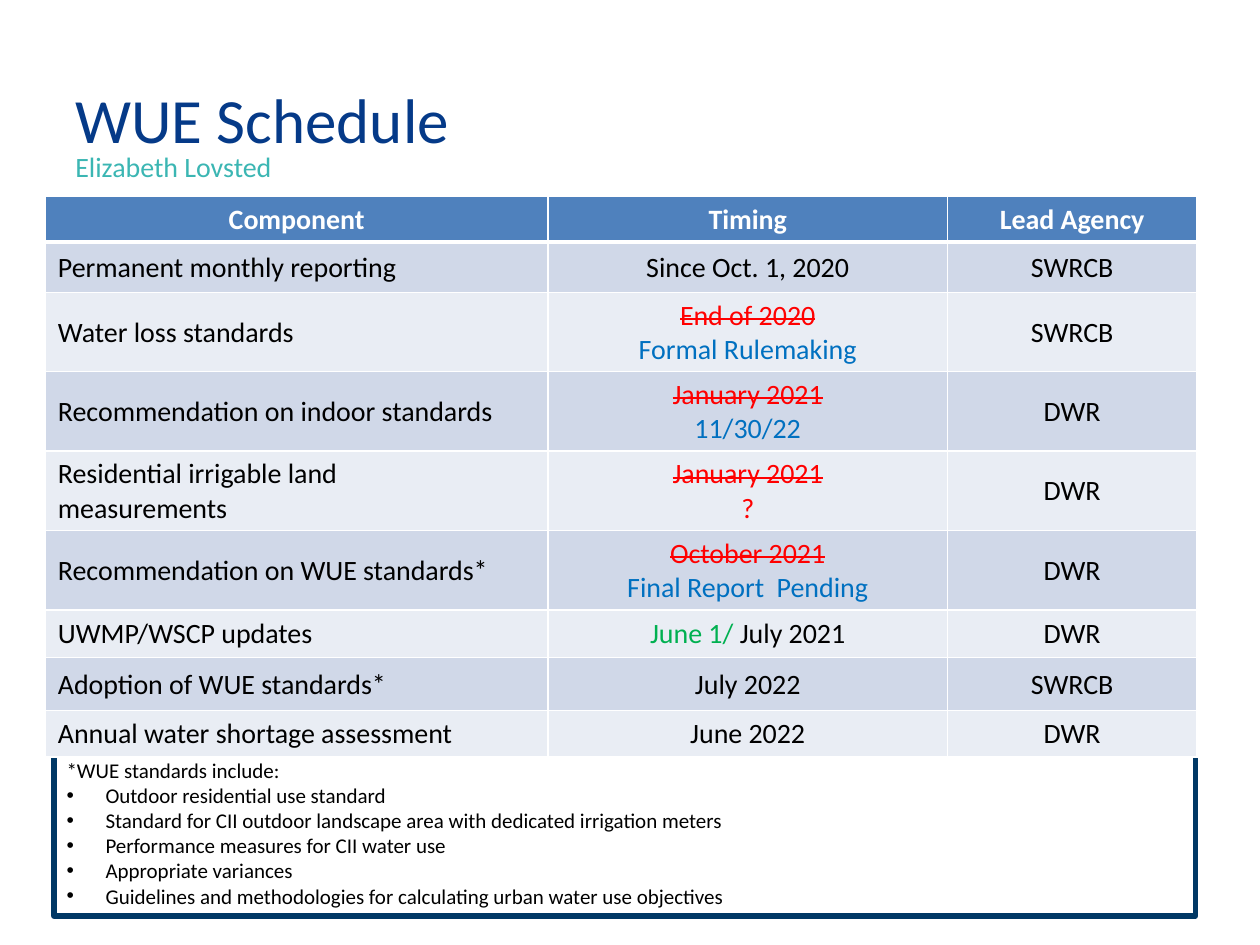
from lxml import etree
from pptx import Presentation
from pptx.dml.color import RGBColor
from pptx.enum.shapes import MSO_SHAPE
from pptx.enum.text import MSO_ANCHOR, PP_ALIGN
from pptx.oxml.ns import qn
from pptx.util import Inches, Pt

LEFT, CENTER = PP_ALIGN.LEFT, PP_ALIGN.CENTER
TOP, MIDDLE, BOTTOM = MSO_ANCHOR.TOP, MSO_ANCHOR.MIDDLE, MSO_ANCHOR.BOTTOM
RECTANGLE = MSO_SHAPE.RECTANGLE
TITLE_ONLY = 5
FONT = "Calibri"
COLORS = {
    "white": "FFFFFF", "black": "000000", "navy": "053A88", "teal": "3BB6B3",
    "frame": "003865", "header": "4F81BD", "band": "D0D8E8", "light": "E9EDF4",
    "red": "FF0000", "blue": "0070C0", "green": "00B050",
}


def color(name):
    return RGBColor.from_string(COLORS[name])


def struck(text):
    return [(text, "red", True)]


class SlideBuilder:
    def __init__(self, deck):
        self.page = deck.slides.add_slide(deck.slide_layouts[TITLE_ONLY])

    def span(self, para, text, size, shade="black", strike=False, bold=False):
        span = para.add_run()
        span.text = text
        font = span.font
        font.name, font.size, font.bold = FONT, Pt(size), bold
        font.color.rgb = color(shade)
        if strike:
            font._element.set("strike", "sngStrike")

    def title(self, text, left, top, width, height):
        box = self.page.shapes.title
        box.left, box.top = Inches(left), Inches(top)
        box.width, box.height = Inches(width), Inches(height)
        box.text_frame.vertical_anchor = BOTTOM
        para = box.text_frame.paragraphs[0]
        para.alignment = LEFT
        para.line_spacing = Pt(36)
        self.span(para, text, 36, "navy")

    def subtitle(self, text, left, top, width, height):
        box = self.page.shapes.add_textbox(
            Inches(left), Inches(top), Inches(width), Inches(height))
        box.text_frame.word_wrap = True
        self.span(box.text_frame.paragraphs[0], text, 16, "teal")

    def bullet(self, para):
        properties = para._p.get_or_add_pPr()
        properties.set("marL", str(Inches(0.31)))
        properties.set("indent", str(-Inches(0.31)))
        etree.SubElement(properties, qn("a:buFont")).set("typeface", "Arial")
        etree.SubElement(properties, qn("a:buChar")).set("char", "•")

    def note(self, heading, items, left, top, width, height):
        box = self.page.shapes.add_shape(
            RECTANGLE, Inches(left), Inches(top), Inches(width), Inches(height))
        box.shadow.inherit = False
        box.fill.solid()
        box.fill.fore_color.rgb = color("white")
        box.line.color.rgb = color("frame")
        box.line.width = Pt(3)
        frame = box.text_frame
        frame.word_wrap = True
        frame.vertical_anchor = TOP
        para = frame.paragraphs[0]
        para.alignment = LEFT
        self.span(para, heading, 12)
        for item in items:
            para = frame.add_paragraph()
            para.alignment = LEFT
            self.bullet(para)
            self.span(para, item, 12)

    def borders(self, cell, bottom):
        properties = cell._tc.get_or_add_tcPr()
        for side, width in (("lnL", 1), ("lnR", 1), ("lnT", 1), ("lnB", bottom)):
            line = etree.SubElement(properties, qn(f"a:{side}"), w=str(Pt(width)))
            fill = etree.SubElement(line, qn("a:solidFill"))
            etree.SubElement(fill, qn("a:srgbClr"), val=COLORS["white"])

    def cell(self, cell, content, fill, align, header):
        self.borders(cell, 3 if header else 1)
        cell.fill.solid()
        cell.fill.fore_color.rgb = color(fill)
        cell.vertical_anchor = TOP if header else MIDDLE
        cell.margin_top = Inches(0.05 if header else 0.04)
        cell.margin_bottom = Inches(0.03)
        lines = [[(content,)]] if isinstance(content, str) else content
        for index, spans in enumerate(lines):
            frame = cell.text_frame
            para = frame.add_paragraph() if index else frame.paragraphs[0]
            para.alignment = align
            for text, *style in spans:
                if header:
                    self.span(para, text, 16, "white", bold=True)
                else:
                    self.span(para, text, 16, *style)

    def table(self, rows, left, top, widths, heights):
        table = self.page.shapes.add_table(
            len(rows), len(widths), Inches(left), Inches(top),
            Inches(sum(widths)), Inches(sum(heights))).table
        for column, width in zip(table.columns, widths):
            column.width = Inches(width)
        for r, (values, height) in enumerate(zip(rows, heights)):
            table.rows[r].height = Inches(height)
            header = r == 0
            fill = "header" if header else ("light", "band")[r % 2]
            for c, content in enumerate(values):
                align = CENTER if header or c else LEFT
                self.cell(table.cell(r, c), content, fill, align, header)


SCHEDULE = [
    ("Component", "Timing", "Lead Agency"),
    ("Permanent monthly reporting", "Since Oct. 1, 2020", "SWRCB"),
    ("Water loss standards",
     [struck("End of 2020"), [("Formal Rulemaking", "blue")]], "SWRCB"),
    ("Recommendation on indoor standards",
     [struck("January 2021"), [("11/30/22", "blue")]], "DWR"),
    ([[("Residential irrigable land",)], [("measurements",)]],
     [struck("January 2021"), [("?", "red")]], "DWR"),
    ("Recommendation on WUE standards*",
     [struck("October 2021"), [("Final Report  Pending", "blue")]], "DWR"),
    ("UWMP/WSCP updates", [[("June 1/ ", "green"), ("July 2021",)]], "DWR"),
    ("Adoption of WUE standards*", "July 2022", "SWRCB"),
    ("Annual water shortage assessment", "June 2022", "DWR"),
]
STANDARDS = [
    "Outdoor residential use standard",
    "Standard for CII outdoor landscape area with dedicated irrigation meters",
    "Performance measures for CII water use",
    "Appropriate variances",
    "Guidelines and methodologies for calculating urban water use objectives",
]


def main():
    deck = Presentation()
    deck.slide_width, deck.slide_height = Inches(10), Inches(7.5)
    builder = SlideBuilder(deck)
    builder.note("*WUE standards include:", STANDARDS, 0.43, 5.96, 9.06, 1.31)
    builder.table(SCHEDULE, 0.36, 1.56, [3.99, 3.17, 1.98],
                  [0.36, 0.4] + [0.63] * 4 + [0.38, 0.42, 0.37])
    builder.subtitle("Elizabeth Lovsted", 0.5, 1.14, 9, 0.35)
    builder.title("WUE Schedule", 0.5, 0.23, 9, 1.06)
    deck.save("out.pptx")


if __name__ == "__main__":
    main()
